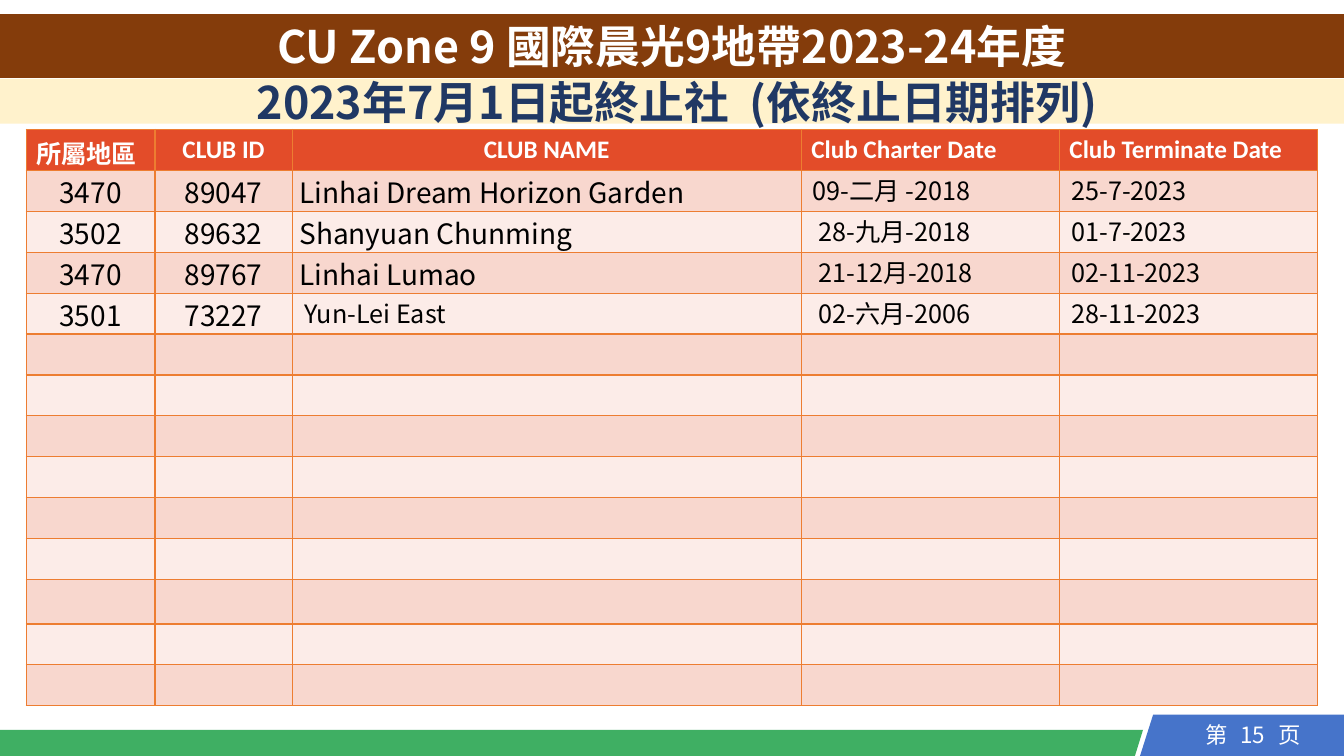
"""Build the slide that lists terminated clubs by termination date."""
from lxml import etree
from pptx import Presentation
from pptx.dml.color import RGBColor
from pptx.enum.shapes import MSO_SHAPE
from pptx.enum.text import MSO_ANCHOR, PP_ALIGN
from pptx.oxml.ns import qn
from pptx.util import Pt

LEFT, CENTER = PP_ALIGN.LEFT, PP_ALIGN.CENTER
TOP, MIDDLE = MSO_ANCHOR.TOP, MSO_ANCHOR.MIDDLE
RECTANGLE = MSO_SHAPE.RECTANGLE

COLORS = {
    "white": "FFFFFF", "black": "000000", "brown": "843C0B", "cream": "FFF2CC",
    "navy": "203864", "green": "3FAF63", "blue": "4674CA", "border": "ED7D31",
    "header": "E34C29", "odd": "F8D7CE", "even": "FCECE8",
}
TITLE_FONT, BODY_FONT, HEADER_FONT = "Noto Sans CJK JP", "Noto Sans CJK SC", "Calibri"

HEADERS = [
    ("所屬地區", BODY_FONT, LEFT, TOP),
    ("CLUB ID", HEADER_FONT, CENTER, TOP),
    ("CLUB NAME", HEADER_FONT, CENTER, MIDDLE),
    ("Club Charter Date", HEADER_FONT, LEFT, TOP),
    ("Club Terminate Date", HEADER_FONT, LEFT, TOP),
]
CLUBS = [
    ("3470", "89047", "Linhai Dream Horizon Garden", "09-二月 -2018", "25-7-2023"),
    ("3502", "89632", "Shanyuan Chunming", "28-九月-2018", "01-7-2023"),
    ("3470", "89767", "Linhai Lumao", "21-12月-2018", "02-11-2023"),
    ("3501", "73227", "Yun-Lei East", "02-六月-2006", "28-11-2023"),
]
BODY_FORMATS = [
    {"size": 20, "align": CENTER, "left": 0.7},
    {"size": 20, "align": CENTER, "left": 0.7},
    {"size": 20, "left": 5.2},
    {"size": 18, "left": 12.3},
    {"size": 18, "left": 8.8},
]
FORMAT_CHANGES = {(1, 3): {"left": 8.3}, (4, 2): {"size": 18, "left": 8.8}}
COLUMN_WIDTHS = [92, 98, 363.6, 184.4, 184.4]
ROW_HEIGHTS = [29.25] * 11 + [31.7] + [29.25] * 2


def write(frame, text, size=18, font=BODY_FONT, color="black", bold=False, align=LEFT):
    para = frame.paragraphs[0]
    para.alignment = align
    span = para.add_run()
    span.text = text
    span.font.size = Pt(size)
    span.font.bold = bold
    span.font.name = font
    span.font.color.rgb = RGBColor.from_string(COLORS[color])
    etree.SubElement(span.font._element, qn("a:ea"), typeface=font)


class Page:
    def __init__(self, deck):
        self.slide = deck.slides.add_slide(deck.slide_layouts[6])
        self.shapes = self.slide.shapes

    def paint(self, shape, color):
        shape.shadow.inherit = False
        shape.fill.solid()
        shape.fill.fore_color.rgb = RGBColor.from_string(COLORS[color])
        shape.line.fill.background()

    def outline(self, points, color):
        start, *others = [(Pt(x), Pt(y)) for x, y in points]
        builder = self.shapes.build_freeform(*start)
        builder.add_line_segments(others, close=True)
        self.paint(builder.convert_to_shape(), color)

    def band(self, top, height, color, text, text_color, left_inset=7.2):
        box = self.shapes.add_shape(RECTANGLE, 0, Pt(top), Pt(960), Pt(height))
        self.paint(box, color)
        frame = box.text_frame
        frame.margin_left = Pt(left_inset)
        frame.vertical_anchor = MIDDLE
        write(frame, text, size=32, font=TITLE_FONT, color=text_color, bold=True, align=CENTER)

    def label(self, left, top, width, height, text, **format):
        frame = self.shapes.add_textbox(Pt(left), Pt(top), Pt(width), Pt(height)).text_frame
        frame.word_wrap = True
        frame.margin_left = frame.margin_right = frame.margin_top = frame.margin_bottom = 0
        write(frame, text, **format)

    def style_cell(self, cell, color):
        properties = cell._tc.get_or_add_tcPr()
        for side in ("lnL", "lnR", "lnT", "lnB"):
            line = etree.SubElement(properties, qn(f"a:{side}"), w=str(Pt(1)))
            fill = etree.SubElement(line, qn("a:solidFill"))
            etree.SubElement(fill, qn("a:srgbClr"), val=COLORS["border"])
        cell.fill.solid()
        cell.fill.fore_color.rgb = RGBColor.from_string(COLORS[color])

    def table(self, left, top):
        table = self.shapes.add_table(
            len(ROW_HEIGHTS), len(COLUMN_WIDTHS), Pt(left), Pt(top),
            Pt(sum(COLUMN_WIDTHS)), Pt(sum(ROW_HEIGHTS))).table
        for column, width in zip(table.columns, COLUMN_WIDTHS):
            column.width = Pt(width)
        for index, (row, height) in enumerate(zip(table.rows, ROW_HEIGHTS)):
            row.height = Pt(height)
            color = "header" if index == 0 else "odd" if index % 2 else "even"
            for cell in row.cells:
                self.style_cell(cell, color)
        for column, (text, font, align, anchor) in enumerate(HEADERS):
            cell = table.cell(0, column)
            cell.vertical_anchor = anchor
            write(cell.text_frame, text, font=font, color="white", bold=True, align=align)
        for row, club in enumerate(CLUBS, start=1):
            for column, text in enumerate(club):
                format = BODY_FORMATS[column] | FORMAT_CHANGES.get((row, column), {})
                cell = table.cell(row, column)
                cell.margin_left = Pt(format.pop("left"))
                cell.margin_right = cell.margin_top = Pt(0.7)
                cell.margin_bottom = 0
                write(cell.text_frame, text, **format)


def main():
    deck = Presentation()
    deck.slide_width, deck.slide_height = Pt(960), Pt(540)
    page = Page(deck)
    page.outline([(0, 540), (810.7, 540), (816.5, 521.3), (0, 521.3)], "green")
    page.outline([(823.7, 510.5), (814.3, 540), (960, 540), (960, 510.5)], "blue")
    for index, text in enumerate(("第", "15", "页")):
        page.label(856 + 26 * index, 515, 26, 24, text, size=16, color="white", align=CENTER)
    page.band(10, 45.6, "brown", "CU Zone 9 國際晨光9地帶2023-24年度", "white")
    page.band(56.4, 32, "cream", "2023年7月1日起終止社  (依終止日期排列)", "navy", left_inset=14.4)
    page.table(18.7, 92.5)
    deck.save("out.pptx")


if __name__ == "__main__":
    main()
